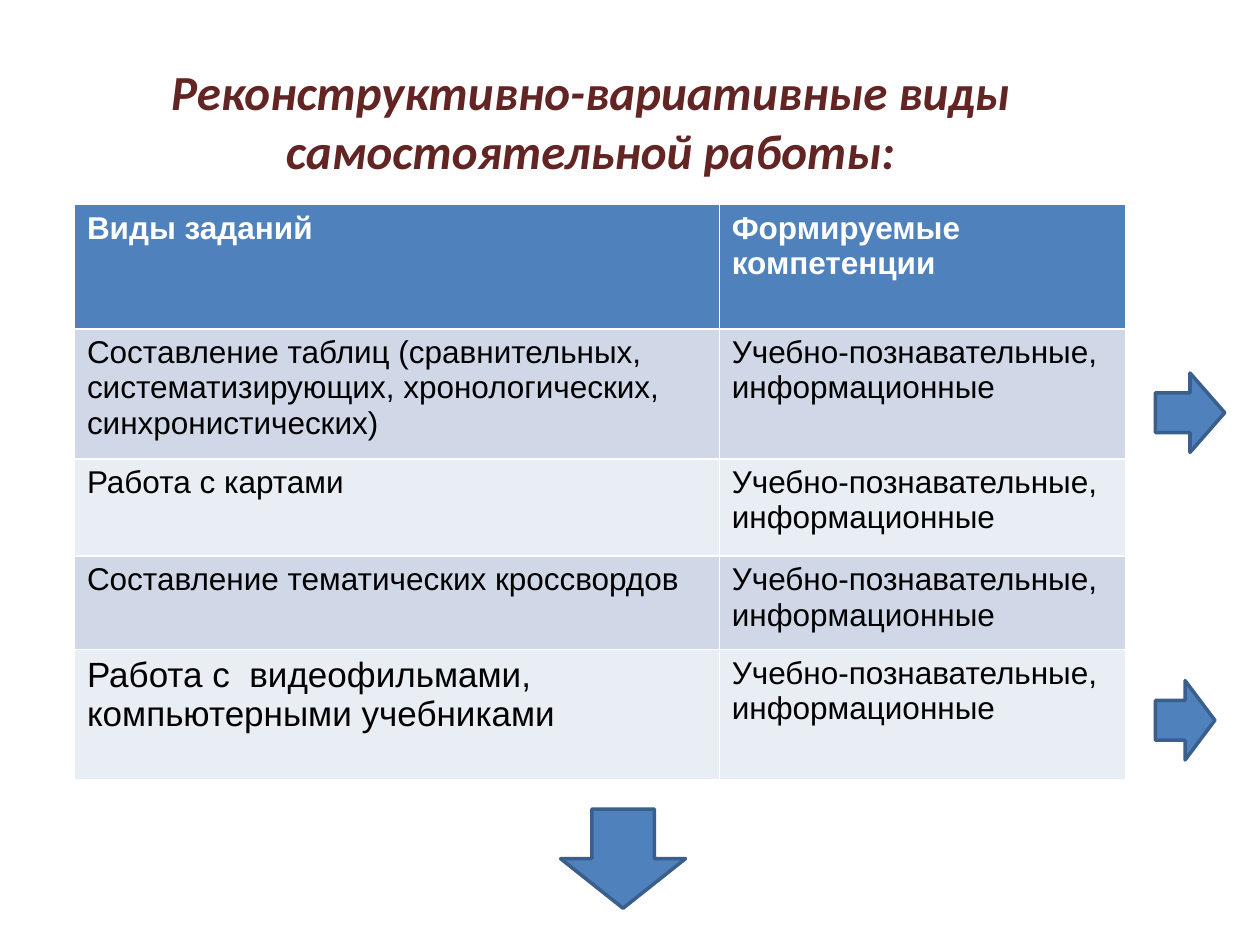
import pptx
import pptx.dml.color
import pptx.enum.shapes
import pptx.enum.text
import pptx.util

Cm, Pt = pptx.util.Cm, pptx.util.Pt
ARROWS = pptx.enum.shapes.MSO_SHAPE
COLOURS = {
    "title": "632523", "header": "4F81BD", "header text": "FFFFFF",
    "odd row": "D0D8E8", "even row": "E9EDF4", "text": "000000",
    "arrow": "4F81BD", "arrow line": "3A5F8C",
}


def colour(name):
    return pptx.dml.color.RGBColor.from_string(COLOURS[name])


def style_font(paragraph, family, size, colour_name, bold=False, italic=False):
    font = paragraph.font
    font.name, font.size, font.bold, font.italic = family, Pt(size), bold, italic
    font.color.rgb = colour(colour_name)


presentation = pptx.Presentation()
presentation.slide_width, presentation.slide_height = Cm(25.4), Cm(19.05)
slide = presentation.slides.add_slide(presentation.slide_layouts[6])

# Tasks and competences; the default table style supplies the white borders
competences = "Учебно-познавательные, информационные"
rows = [
    ("Виды заданий", "Формируемые компетенции"),
    ("Составление таблиц (сравнительных, систематизирующих, "
     "хронологических, синхронистических)", competences),
    ("Работа с картами", competences),
    ("Составление тематических кроссвордов", competences),
    ("Работа с  видеофильмами, компьютерными учебниками", competences),
]
row_heights = [2.51, 2.62, 1.96, 1.88, 2.62]
column_widths = [13.0, 8.2]
tasks = slide.shapes.add_table(
    len(rows), len(column_widths), Cm(1.5), Cm(4.12),
    Cm(sum(column_widths)), Cm(sum(row_heights))).table
for column, width in zip(tasks.columns, column_widths):
    column.width = Cm(width)

for r, (texts, height) in enumerate(zip(rows, row_heights)):
    tasks.rows[r].height = Cm(height)
    header = r == 0
    fill_name = "header" if header else "odd row" if r % 2 else "even row"
    for c, text in enumerate(texts):
        cell = tasks.cell(r, c)
        cell.text = text
        cell.fill.solid()
        cell.fill.fore_color.rgb = colour(fill_name)
        video_task = r == len(rows) - 1 and c == 0
        style_font(cell.text_frame.paragraphs[0], "Arial", 20 if video_task else 18,
                   "header text" if header else "text", bold=header)

# Title
title = slide.shapes.add_textbox(Cm(1.5), Cm(1.12), Cm(20.8), Cm(2.64)).text_frame
title.word_wrap = True
title.auto_size = pptx.enum.text.MSO_AUTO_SIZE.SHAPE_TO_FIT_TEXT
title.text = "Реконструктивно-вариативные виды самостоятельной работы:"
title.paragraphs[0].alignment = pptx.enum.text.PP_ALIGN.CENTER
style_font(title.paragraphs[0], "Calibri", 28, "title", bold=True, italic=True)

# Arrows beside and below the table: kind, left, top, width, height, rotation
arrows = [
    (ARROWS.LEFT_ARROW, 23.29, 13.72, 1.2, 1.6, 180),
    (ARROWS.RIGHT_ARROW, 23.29, 7.52, 1.4, 1.6, 0),
    (ARROWS.RIGHT_ARROW, 11.56, 16.05, 2.0, 2.52, 90),
]
for kind, left, top, width, height, rotation in arrows:
    arrow = slide.shapes.add_shape(kind, Cm(left), Cm(top), Cm(width), Cm(height))
    arrow.rotation = rotation
    arrow.shadow.inherit = False
    arrow.fill.solid()
    arrow.fill.fore_color.rgb = colour("arrow")
    arrow.line.color.rgb = colour("arrow line")
    arrow.line.width = Pt(2)

presentation.save("out.pptx")
